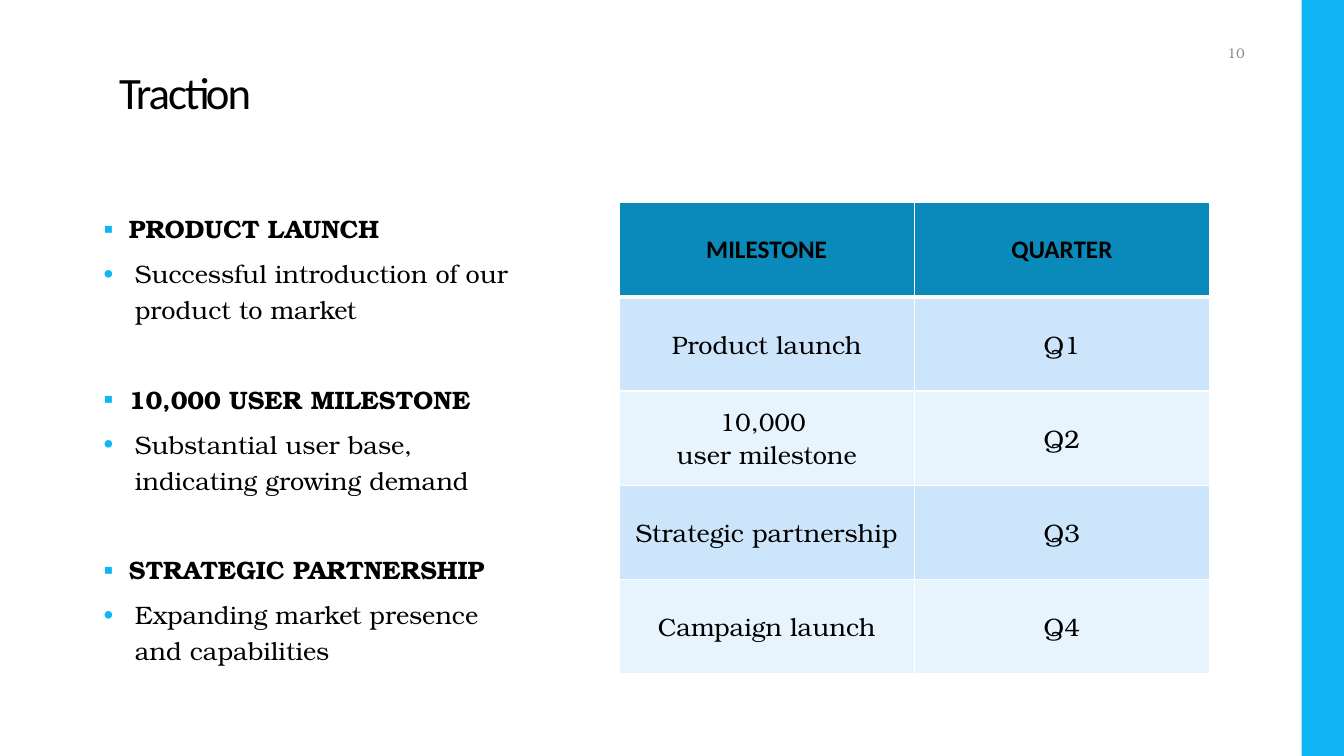
"""Build the Traction slide: milestones in words beside a table of quarters."""
from dataclasses import dataclass

from lxml.etree import SubElement
from pptx import Presentation
from pptx.dml.color import RGBColor
from pptx.enum.shapes import MSO_SHAPE
from pptx.enum.text import MSO_ANCHOR, PP_ALIGN
from pptx.oxml.ns import qn
from pptx.util import Cm, Pt

TITLE = "Traction"
PAGE = "10"
POINTS = [
    ("PRODUCT LAUNCH", "Successful introduction of our product to market"),
    ("10,000 USER MILESTONE", "Substantial user base, indicating growing demand"),
    ("STRATEGIC PARTNERSHIP", "Expanding market presence and capabilities"),
]
ROWS = [
    ("MILESTONE", "QUARTER"),
    ("Product launch", "Q1"),
    ("10,000 \vuser milestone", "Q2"),
    ("Strategic partnership", "Q3"),
    ("Campaign launch", "Q4"),
]


@dataclass(frozen=True)
class Theme:
    accent: str = "10B6F4"
    header: str = "098ABA"
    bands: tuple = ("CCE5FB", "E7F3FD")
    ink: str = "000000"
    muted: str = "8C8C8C"
    rule: str = "FFFFFF"
    head_font: str = "Calibri"
    body_font: str = "TeX Gyre Bonum"
    title_size: int = 32
    body_size: int = 18
    page_size: int = 10


T = Theme()
LEFT, TOP, HEIGHT = 2.36, 5.11, 11.86
TABLE_LEFT, TABLE_WIDTH = 15.6, 14.88
BAR_WIDTH = 1.07


def write(p, text, font=T.body_font, size=T.body_size, color=T.ink, bold=False,
          align=PP_ALIGN.LEFT, spacing=None, before=0, after=0, track=None):
    p.text = text
    p.alignment = align
    p.line_spacing = spacing
    p.space_before, p.space_after = Pt(before), Pt(after)
    for r in p.runs:
        r.font.name, r.font.size, r.font.bold = font, Pt(size), bold
        r.font.color.rgb = RGBColor.from_string(color)
        if track is not None:
            r.font._element.set("spc", str(track))


def add_bullet(p, char, indent):
    pPr = p._p.get_or_add_pPr()
    pPr.set("marL", str(Cm(indent)))
    pPr.set("indent", str(-Cm(indent)))
    SubElement(SubElement(pPr, qn("a:buClr")), qn("a:srgbClr"), val=T.accent)
    SubElement(pPr, qn("a:buSzPct"), val="110000")
    SubElement(pPr, qn("a:buFont"), typeface="Arial")
    SubElement(pPr, qn("a:buChar"), char=char)


def add_borders(cell, bottom):
    tcPr = cell._tc.get_or_add_tcPr()
    for side, width in (("L", 1), ("R", 1), ("T", 1), ("B", bottom)):
        ln = SubElement(tcPr, qn(f"a:ln{side}"), w=str(Pt(width)))
        SubElement(SubElement(ln, qn("a:solidFill")), qn("a:srgbClr"), val=T.rule)


def add_bar(s, prs):
    sp = s.shapes.add_shape(MSO_SHAPE.RECTANGLE, prs.slide_width - Cm(BAR_WIDTH), 0,
                            Cm(BAR_WIDTH), prs.slide_height)
    sp.shadow.inherit = False
    sp.fill.solid()
    sp.fill.fore_color.rgb = RGBColor.from_string(T.accent)
    sp.line.fill.background()


def set_title(s):
    sp = s.shapes.title
    sp.left, sp.top, sp.width, sp.height = Cm(LEFT), Cm(0), Cm(28.12), Cm(3.63)
    tf = sp.text_frame
    tf.vertical_anchor = MSO_ANCHOR.BOTTOM
    tf.margin_left = tf.margin_right = tf.margin_top = tf.margin_bottom = Cm(0.64)
    write(tf.paragraphs[0], TITLE, font=T.head_font, size=T.title_size,
          spacing=0.85, track=-150)


def add_points(s):
    tf = s.shapes.add_textbox(Cm(LEFT), Cm(TOP), Cm(10.95), Cm(HEIGHT)).text_frame
    tf.word_wrap = True
    for i, (head, detail) in enumerate(POINTS):
        p = tf.add_paragraph() if i else tf.paragraphs[0]
        add_bullet(p, "▪", 0.64)
        write(p, head, bold=True, spacing=1.2, before=32 if i else 0, after=6)
        p = tf.add_paragraph()
        add_bullet(p, "•", 0.79)
        write(p, detail, spacing=1.2, after=6)


def add_milestones(s):
    table = s.shapes.add_table(len(ROWS), len(ROWS[0]), Cm(TABLE_LEFT), Cm(TOP),
                               Cm(TABLE_WIDTH), Cm(HEIGHT)).table
    for i, row in enumerate(ROWS):
        is_head = i == 0
        fill = T.header if is_head else T.bands[(i - 1) % 2]
        for j, text in enumerate(row):
            cell = table.cell(i, j)
            add_borders(cell, 3 if is_head else 1)
            cell.fill.solid()
            cell.fill.fore_color.rgb = RGBColor.from_string(fill)
            cell.vertical_anchor = MSO_ANCHOR.MIDDLE
            write(cell.text_frame.paragraphs[0], text, bold=is_head,
                  font=T.head_font if is_head else T.body_font,
                  align=PP_ALIGN.CENTER)


def add_page_number(s):
    tf = s.shapes.add_textbox(Cm(29.08), Cm(0.89), Cm(2.54), Cm(0.89)).text_frame
    tf.word_wrap = True
    tf.vertical_anchor = MSO_ANCHOR.MIDDLE
    write(tf.paragraphs[0], PAGE, size=T.page_size, color=T.muted, align=PP_ALIGN.RIGHT)


def main():
    prs = Presentation()
    prs.slide_width, prs.slide_height = Cm(33.87), Cm(19.05)
    s = prs.slides.add_slide(prs.slide_layouts[5])
    add_bar(s, prs)
    set_title(s)
    add_points(s)
    add_milestones(s)
    add_page_number(s)
    prs.save("out.pptx")


if __name__ == "__main__":
    main()
